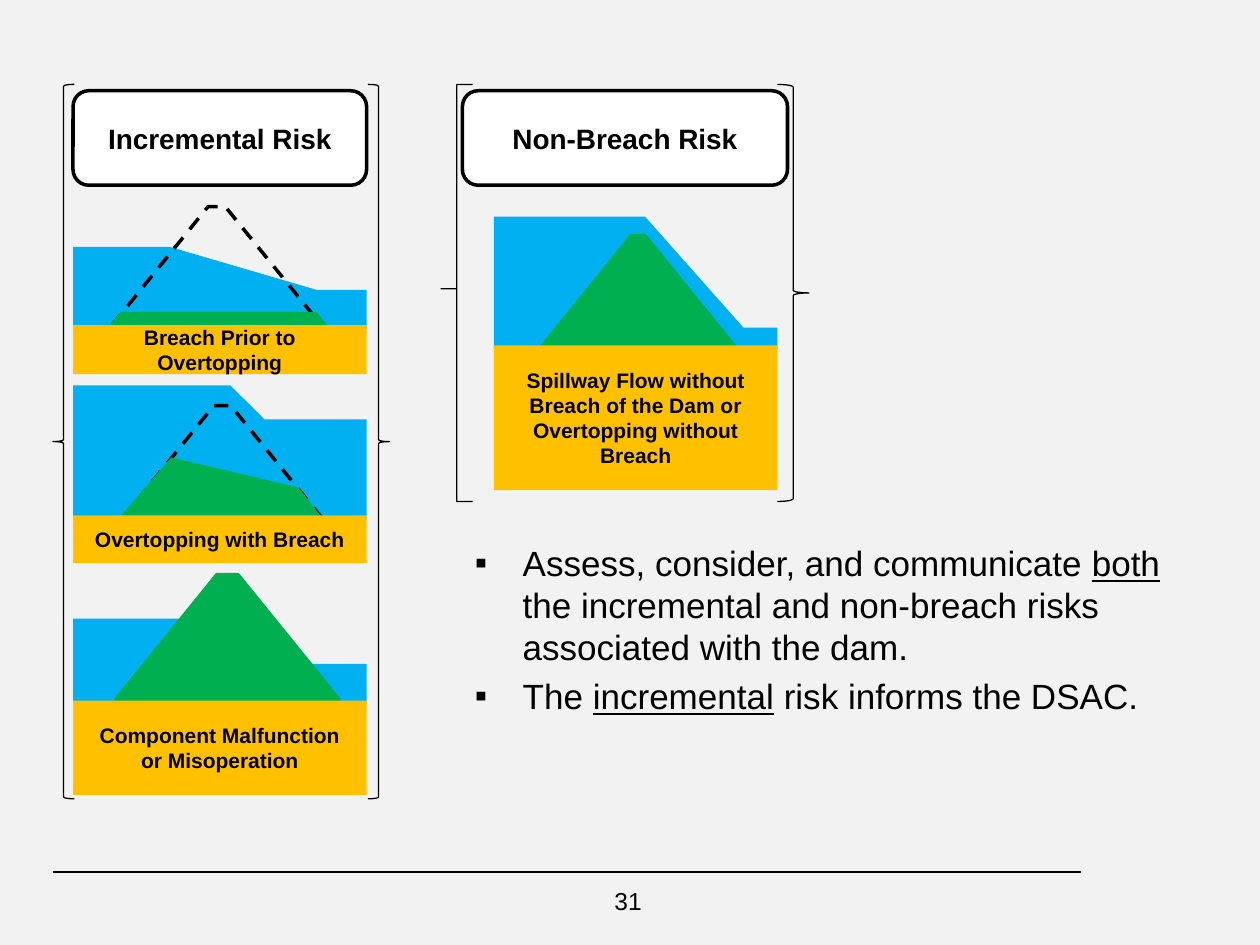
from lxml import etree
from pptx import Presentation
from pptx import util as u
from pptx.dml.color import RGBColor
from pptx.enum import dml, shapes, text
from pptx.oxml.ns import qn

BLACK, WHITE, PAPER = "000000", "FFFFFF", "F2F2F2"
WATER, DAM, BASE = "00B0F0", "00B050", "FFC000"
FONT = "Arial"
KIND = shapes.MSO_SHAPE

# Content: boxes are (left, top, width, height)
headings = [
    ("Incremental Risk", (0.58, 0.72, 2.33, 0.75)),
    ("Non-Breach Risk", (3.67, 0.72, 2.58, 0.75)),
]
# Water is a surface profile (x, y), closed down to the water floor.
# The outline is the dam before failure, the breach is what remains of it.
scenes = [
    {"caption": ["Spillway Flow without Breach of the Dam or Overtopping without Breach"],
     "base": (3.92, 2.74, 2.25, 1.15),
     "water": [(3.92, 1.72), (5.12, 1.72), (5.9, 2.6), (6.17, 2.6)],
     "dam": (4.29, 1.87, 1.55, 0.89)},
    {"caption": ["Overtopping with Breach"],
     "base": (0.58, 4.09, 2.33, 0.38),
     "water": [(0.58, 3.06), (1.83, 3.06), (2.1, 3.33), (2.91, 3.33)],
     "outline": (0.96, 3.22, 1.61, 0.91),
     "breach": [(0.91, 4.15), (1.36, 3.63), (2.37, 3.87), (2.59, 4.15)]},
    {"caption": ["Component Malfunction", "or Misoperation"],
     "base": (0.58, 5.56, 2.33, 0.75),
     "water": [(0.58, 4.91), (1.94, 4.91), (1.94, 5.27), (2.91, 5.27)],
     "dam": (0.92, 4.56, 1.77, 0.99)},
    {"caption": ["Breach Prior to Overtopping"],
     "base": (0.58, 2.58, 2.33, 0.39),
     "water": [(0.58, 1.96), (1.35, 1.96), (2.51, 2.3), (2.91, 2.3)],
     "outline": (0.89, 1.64, 1.66, 0.94),
     "dam": (0.89, 2.49, 1.69, 0.09)},
]
braces = [
    (KIND.LEFT_BRACE, (0.42, 0.67, 0.17, 5.67), None),
    (KIND.RIGHT_BRACE, (2.92, 0.67, 0.17, 5.67), None),
    (KIND.LEFT_BRACE, (3.5, 0.67, 0.25, 3.31), (0, 0.49)),
    (KIND.RIGHT_BRACE, (6.17, 0.67, 0.25, 3.31), None),
]
# Each bullet is a list of (words, underlined)
bullets = [
    [("Assess, consider, and communicate ", False), ("both", True),
     (" the incremental and non-breach risks associated with the dam.", False)],
    [("The ", False), ("incremental", True),
     (" risk informs the DSAC.", False)],
]
page_number = "31"

prs = Presentation()
prs.slide_width, prs.slide_height = u.Inches(10), u.Inches(7.5)
slide = prs.slides.add_slide(prs.slide_layouts[6])


def color(value):
    return RGBColor.from_string(value)


def paint(shape, fill=None, line=None, width=2, dashed=False):
    shape.shadow.inherit = False
    if fill:
        shape.fill.solid()
        shape.fill.fore_color.rgb = color(fill)
    else:
        shape.fill.background()
    if line:
        shape.line.color.rgb = color(line)
        shape.line.width = u.Pt(width)
        if dashed:
            shape.line.dash_style = dml.MSO_LINE.DASH
    else:
        shape.line.fill.background()
    return shape


def add_preset(parent, kind, box, adjust=None, **look):
    shape = parent.shapes.add_shape(kind, *map(u.Inches, box))
    for i, value in enumerate(adjust or ()):
        shape.adjustments[i] = value
    return paint(shape, **look)


def add_polygon(parent, points, fill):
    corners = [(u.Inches(x), u.Inches(y)) for x, y in points]
    builder = parent.shapes.build_freeform(*corners[0])
    builder.add_line_segments(corners[1:], close=True)
    return paint(builder.convert_to_shape(), fill)


def add_bullet(paragraph, mark, indent):
    props = paragraph._p.get_or_add_pPr()
    props.set("marL", str(u.Inches(indent)))
    props.set("indent", str(-u.Inches(indent)))
    etree.SubElement(props, qn("a:buFont")).set("typeface", FONT)
    etree.SubElement(props, qn("a:buChar")).set("char", mark)


def write(shape, paragraphs, size, bold=False, align=text.PP_ALIGN.CENTER,
          anchor=text.MSO_ANCHOR.MIDDLE, bullet=None, gap=0):
    frame = shape.text_frame
    frame.word_wrap = True
    frame.vertical_anchor = anchor
    for i, parts in enumerate(paragraphs):
        paragraph = frame.paragraphs[0] if i == 0 else frame.add_paragraph()
        paragraph.alignment = align
        if i and gap:
            paragraph.space_before = u.Pt(gap)
        if bullet:
            add_bullet(paragraph, bullet, 0.38)
        for words, underlined in parts:
            run = paragraph.add_run()
            run.text = words
            run.font.name, run.font.size = FONT, u.Pt(size)
            run.font.bold = bold
            run.font.underline = underlined
            run.font.color.rgb = color(BLACK)


def plain(lines):
    return [[(line, False)] for line in lines]


def add_scene(scene):
    group = slide.shapes.add_group_shape()
    left, top, width, _ = scene["base"]
    floor = top + 0.03
    add_polygon(group, scene["water"] + [(left + width, floor), (left, floor)], WATER)
    if "outline" in scene:
        add_preset(group, KIND.TRAPEZOID, scene["outline"], [0.81],
                   line=BLACK, dashed=True)
    if "dam" in scene:
        add_preset(group, KIND.TRAPEZOID, scene["dam"], [0.81], fill=DAM, line=DAM)
    if "breach" in scene:
        add_polygon(group, scene["breach"], DAM)
    base = add_preset(group, KIND.RECTANGLE, scene["base"], fill=BASE)
    write(base, plain(scene["caption"]), 12, bold=True)


# Background and footer
slide.background.fill.solid()
slide.background.fill.fore_color.rgb = color(PAPER)
rule = slide.shapes.add_connector(
    shapes.MSO_CONNECTOR.STRAIGHT, *map(u.Inches, (0.42, 6.92, 8.58, 6.92)))
rule.line.color.rgb = color(BLACK)
rule.line.width = u.Pt(0.75)
etree.SubElement(rule._element.spPr, qn("a:effectLst"))
footer = slide.shapes.add_textbox(*map(u.Inches, (3.82, 6.98, 2.33, 0.52)))
write(footer, plain([page_number]), 14, anchor=text.MSO_ANCHOR.TOP)

# Headings, dam scenes and the braces around them
for heading, box in headings:
    write(add_preset(slide, KIND.ROUNDED_RECTANGLE, box, fill=WHITE, line=BLACK),
          plain([heading]), 16, bold=True)
for scene in scenes:
    add_scene(scene)
for kind, box, adjust in braces:
    add_preset(slide, kind, box, adjust, line=BLACK, width=0.75)

# Takeaways
takeaways = slide.shapes.add_textbox(*map(u.Inches, (3.67, 4.25, 5.83, 1.75)))
write(takeaways, bullets, 20, align=text.PP_ALIGN.LEFT,
      anchor=text.MSO_ANCHOR.TOP, bullet="▪", gap=4)

prs.save("out.pptx")
